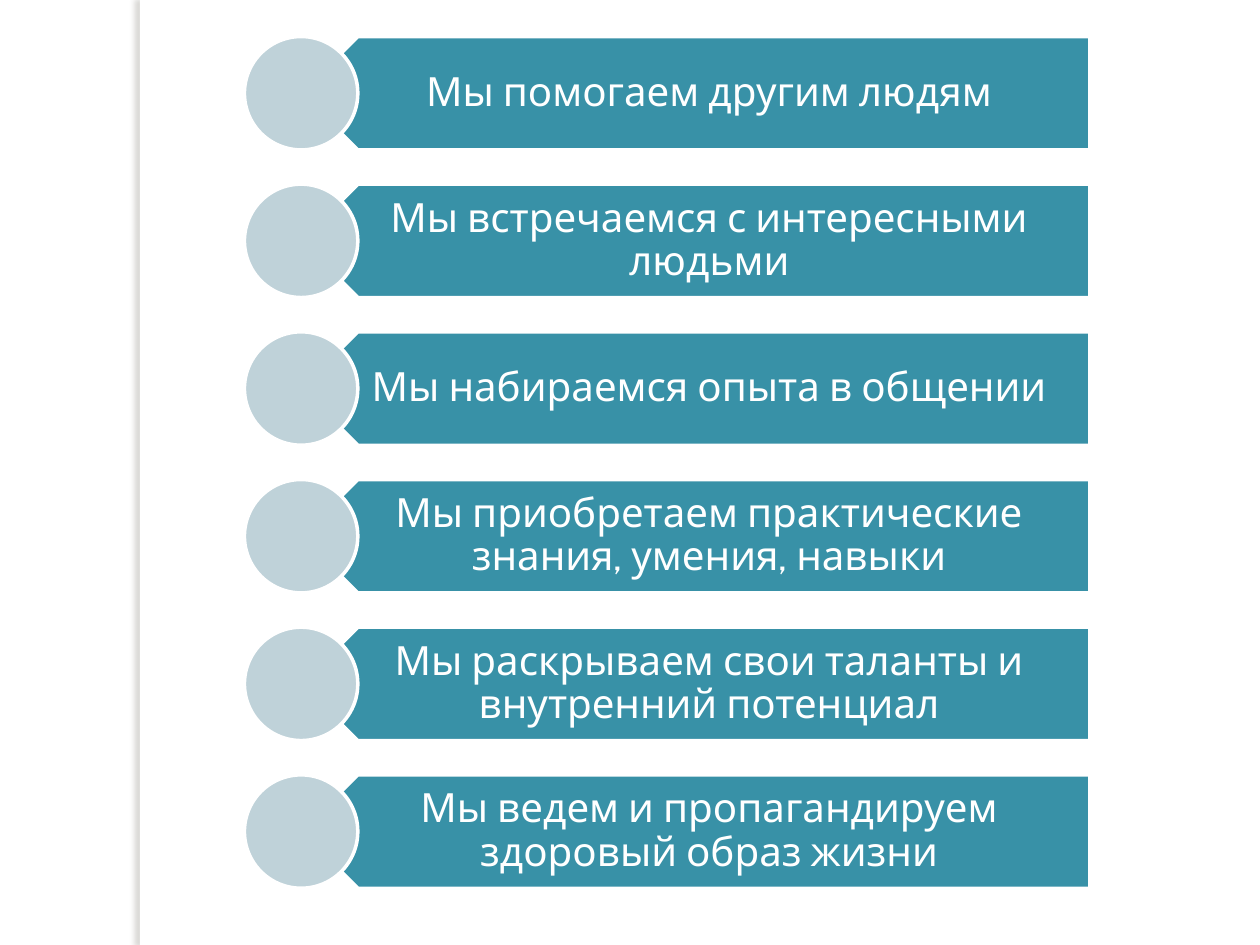
from lxml import etree
from pptx import Presentation
from pptx.dml.color import RGBColor
from pptx.enum.shapes import MSO_SHAPE
from pptx.enum.text import MSO_ANCHOR, PP_ALIGN
from pptx.oxml import parse_xml
from pptx.oxml.ns import nsdecls
from pptx.util import Inches, Pt

REASONS = [
    "Мы помогаем другим людям",
    "Мы встречаемся с интересными людьми",
    "Мы набираемся опыта в общении",
    "Мы приобретаем практические знания, умения, навыки",
    "Мы раскрываем свои таланты и внутренний потенциал",
    "Мы ведем и пропагандируем здоровый образ жизни",
]
FIRST_TOP, LAST_TOP = 0.29, 6.15
ROW_HEIGHT = 0.9
BANNER_LEFT, BANNER_WIDTH = 2.39, 6.26
PITCH = (LAST_TOP - FIRST_TOP) / (len(REASONS) - 1)


def color(hex_string):
    return RGBColor.from_string(hex_string)


def add_filled_shape(kind, left, top, width, height, fill):
    shape = slide.shapes.add_shape(
        kind, Inches(left), Inches(top), Inches(width), Inches(height))
    shape.shadow.inherit = False
    shape.fill.solid()
    shape.fill.fore_color.rgb = color(fill)
    shape.line.color.rgb = color("FFFFFF")
    shape.line.width = Pt(2)
    return shape


presentation = Presentation()
presentation.slide_width = Inches(10)
presentation.slide_height = Inches(7.5)
slide = presentation.slides.add_slide(presentation.slide_layouts[6])
slide.background.fill.solid()
slide.background.fill.fore_color.rgb = color("FFFFFF")

# Side strip with a soft shadow to its left
strip = add_filled_shape(MSO_SHAPE.RECTANGLE, 1.11, 0, 0.08, 7.5, "FFFFFF")
strip.line.fill.background()
effects = strip.element.spPr.find("{*}effectLst")
effects.append(parse_xml(
    f'<a:outerShdw {nsdecls("a")} blurRad="{Pt(3)}" dist="{Pt(3)}" '
    'dir="10800000" algn="tl" rotWithShape="0">'
    '<a:srgbClr val="736F63"><a:alpha val="25000"/></a:srgbClr></a:outerShdw>'))

for index, reason in enumerate(REASONS):
    top = FIRST_TOP + index * PITCH

    banner = add_filled_shape(
        MSO_SHAPE.PENTAGON, BANNER_LEFT, top, BANNER_WIDTH, ROW_HEIGHT, "3891A7")
    banner.rotation = 180

    # The banner is turned upside down, so its label is a separate box
    label = slide.shapes.add_textbox(
        Inches(BANNER_LEFT), Inches(top), Inches(BANNER_WIDTH), Inches(ROW_HEIGHT))
    frame = label.text_frame
    frame.word_wrap = True
    frame.vertical_anchor = MSO_ANCHOR.MIDDLE
    frame.margin_left, frame.margin_right = Inches(0.4), Inches(0.18)
    frame.margin_top = frame.margin_bottom = Inches(0.1)
    paragraph = frame.paragraphs[0]
    paragraph.alignment = PP_ALIGN.CENTER
    paragraph.line_spacing = 0.9
    run = paragraph.add_run()
    run.text = reason
    run.font.name = "Cabin"
    run.font.size = Pt(23)
    run.font.color.rgb = color("FFFFFF")

    add_filled_shape(
        MSO_SHAPE.OVAL, BANNER_LEFT - ROW_HEIGHT / 2, top,
        ROW_HEIGHT, ROW_HEIGHT, "BFD2D9")

presentation.save("out.pptx")
